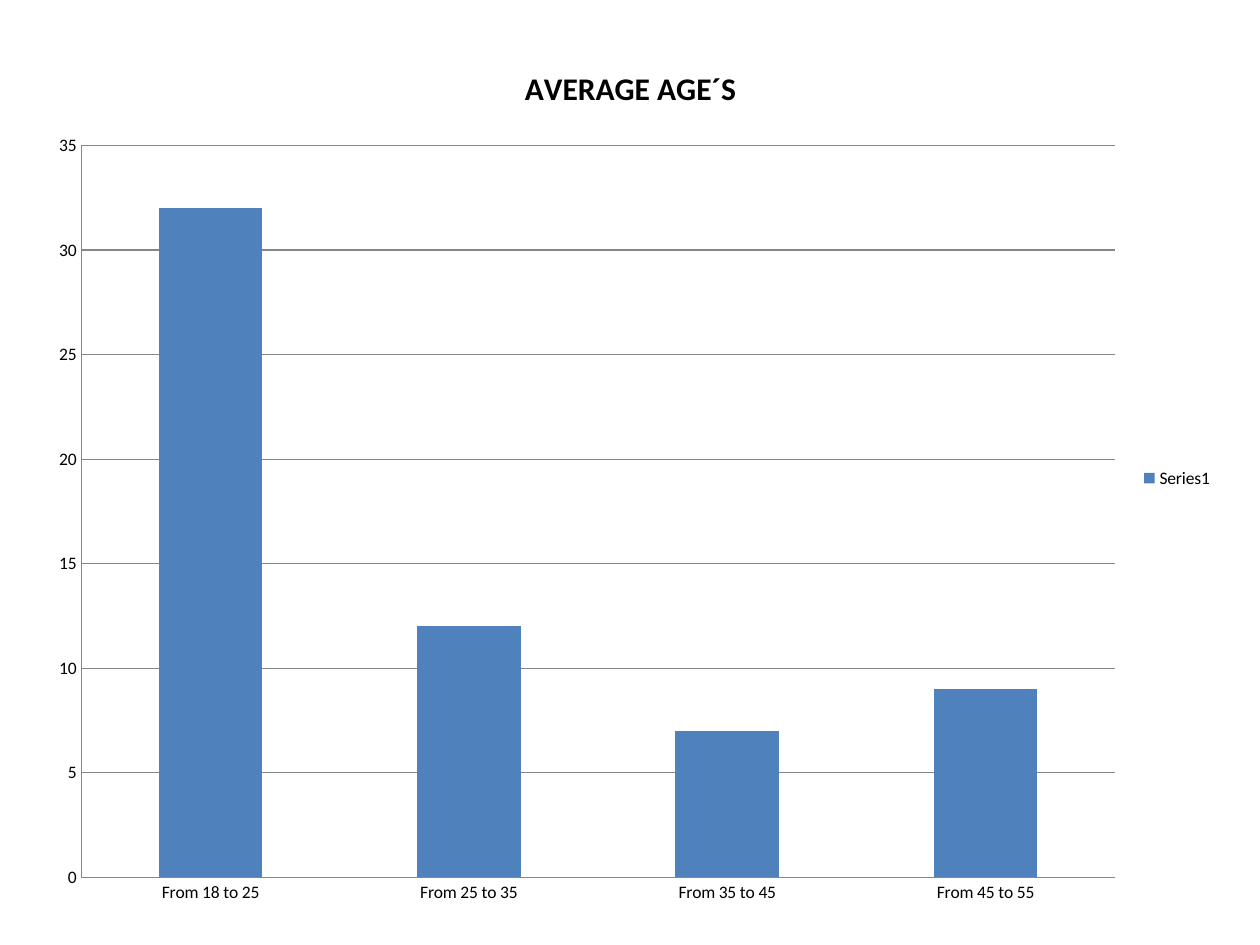
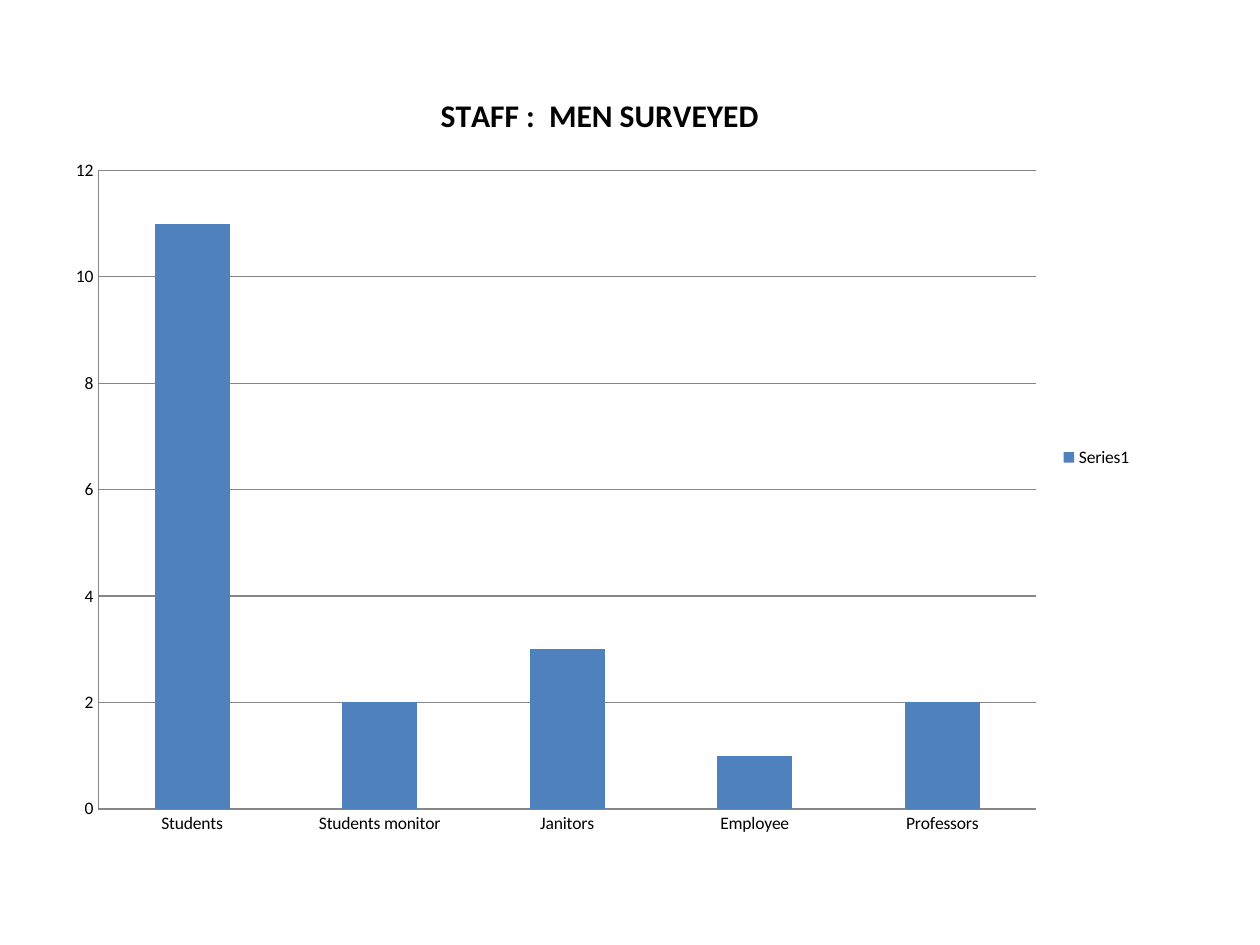
from dataclasses import dataclass

from pptx import Presentation
from pptx.chart.data import CategoryChartData
from pptx.dml.color import RGBColor
from pptx.enum.chart import XL_CHART_TYPE, XL_LEGEND_POSITION, XL_TICK_MARK
from pptx.util import Inches, Pt

COLUMN = XL_CHART_TYPE.COLUMN_CLUSTERED
RIGHT = XL_LEGEND_POSITION.RIGHT
NO_TICK = XL_TICK_MARK.NONE
BLANK = 6


@dataclass(frozen=True)
class Theme:
    face: str = "Calibri"
    ink: RGBColor = RGBColor(0, 0, 0)
    bar: RGBColor = RGBColor(0x4F, 0x81, 0xBD)
    rule: RGBColor = RGBColor(0x86, 0x86, 0x86)
    paper: RGBColor = RGBColor(0xFF, 0xFF, 0xFF)
    head: Pt = Pt(18)
    body: Pt = Pt(10)
    line: Pt = Pt(0.75)


def assign(target, values):
    for name, value in values.items():
        setattr(target, name, value)


class Deck:
    def __init__(self, theme):
        self.theme = theme
        self.show = Presentation()
        assign(self.show, {"slide_width": Inches(10), "slide_height": Inches(7.5)})
        self.slide = None

    def page(self):
        self.slide = self.show.slides.add_slide(self.show.slide_layouts[BLANK])
        fill = self.slide.background.fill
        fill.solid()
        fill.fore_color.rgb = self.theme.paper

    def font(self, font, size, bold=False):
        assign(font, {"name": self.theme.face, "size": size, "bold": bold})
        font.color.rgb = self.theme.ink

    def stroke(self, line):
        line.width = self.theme.line
        line.color.rgb = self.theme.rule

    def columns(self, title, box, counts):
        data = CategoryChartData()
        data.categories = counts.keys()
        data.add_series("Series1", counts.values())
        frame = self.slide.shapes.add_chart(COLUMN, *map(Inches, box), data)
        chart = frame.chart
        self.font(chart.font, self.theme.body)

        chart.has_title = True
        text = chart.chart_title.text_frame
        text.text = title
        self.font(text.paragraphs[0].runs[0].font, self.theme.head, True)
        chart.chart_title.include_in_layout = False

        chart.has_legend = True
        assign(chart.legend, {"position": RIGHT, "include_in_layout": False})

        for axis in (chart.category_axis, chart.value_axis):
            assign(axis, {"major_tick_mark": NO_TICK, "minor_tick_mark": NO_TICK})
            self.stroke(axis.format.line)
        chart.value_axis.has_major_gridlines = True
        self.stroke(chart.value_axis.major_gridlines.format.line)

        plot = chart.plots[0]
        assign(plot, {"gap_width": 150, "vary_by_categories": False})
        fill = plot.series[0].format.fill
        fill.solid()
        fill.fore_color.rgb = self.theme.bar


CHARTS = [
    ("AVERAGE AGE´S", (0.28, 0.29, 9.45, 7.01),
     {"From 18 to 25": 32, "From 25 to 35": 12,
      "From 35 to 45": 7, "From 45 to 55": 9}),
    ("STAFF :  MEN SURVEYED", (0.43, 0.52, 8.66, 6.22),
     {"Students": 11, "Students monitor": 2, "Janitors": 3,
      "Employee": 1, "Professors": 2}),
]


def main():
    deck = Deck(Theme())
    for title, box, counts in CHARTS:
        deck.page()
        deck.columns(title, box, counts)
    deck.show.save("out.pptx")


if __name__ == "__main__":
    main()
